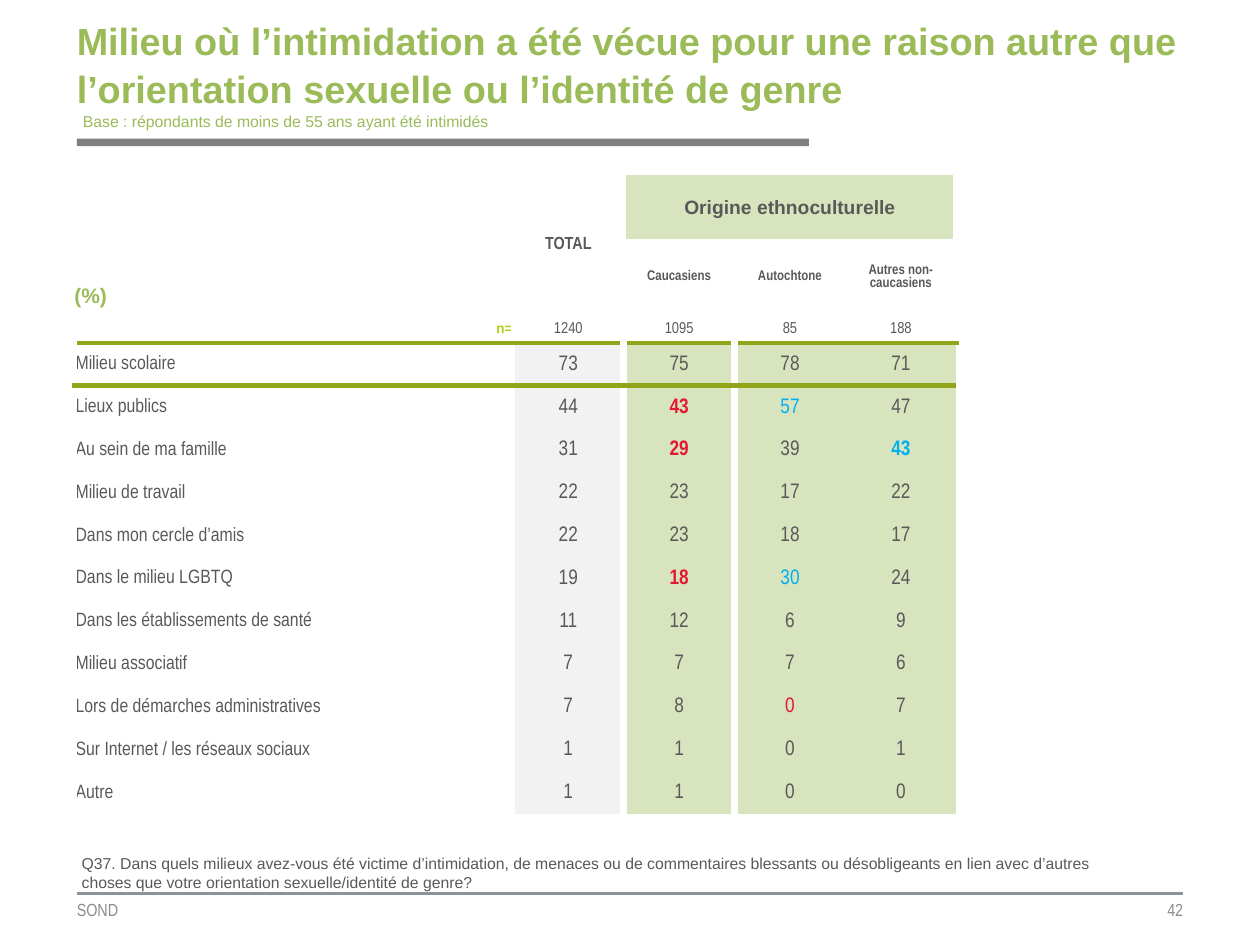
"""Build the slide on where bullying was experienced, by ethnocultural origin."""
from lxml import etree
from pptx import Presentation
from pptx.dml.color import RGBColor
from pptx.enum.shapes import MSO_CONNECTOR, MSO_SHAPE
from pptx.enum.text import MSO_ANCHOR, PP_ALIGN
from pptx.oxml.ns import qn
from pptx.util import Inches, Pt

LEFT, CENTER, RIGHT = PP_ALIGN.LEFT, PP_ALIGN.CENTER, PP_ALIGN.RIGHT
TOP, MIDDLE, BOTTOM = MSO_ANCHOR.TOP, MSO_ANCHOR.MIDDLE, MSO_ANCHOR.BOTTOM
STRAIGHT, RECTANGLE = MSO_CONNECTOR.STRAIGHT, MSO_SHAPE.RECTANGLE

GREEN = RGBColor(0x9B, 0xBB, 0x59)
LIME = RGBColor(0xB5, 0xCC, 0x22)
OLIVE = RGBColor(0x91, 0xA5, 0x1B)
PALE_GREEN = RGBColor(0xD7, 0xE4, 0xBD)
PALE_GRAY = RGBColor(0xF2, 0xF2, 0xF2)
TEXT_GRAY = RGBColor(0x59, 0x59, 0x59)
FOOTER_GRAY = RGBColor(0x8C, 0x8C, 0x8C)
BAR_GRAY = RGBColor(0x7F, 0x7F, 0x7F)
RULE_GRAY = RGBColor(0x88, 0x95, 0x9E)
WHITE = RGBColor(0xFF, 0xFF, 0xFF)
RED = RGBColor(0xE3, 0x18, 0x36)
BLUE = RGBColor(0x00, 0xB0, 0xF0)

SANS, NARROW = "Arial", "Arial Narrow"
NO_STYLE = "{2D5ABB26-0587-4C30-8999-92F81FD0307C}"
NO_INSETS = (0, 0, 0, 0)
CELL_INSETS = (0.01, 0.01, 0.01, 0)
SIDE_INSETS = (0, 0.05, 0, 0.05)

COLUMN_WIDTHS = [3.48] + [0.88] * 4
HEADER_HEIGHTS = [0.27, 0.18, 0.6, 0.2]
ROW_HEIGHT = 0.34
GROUPS = ["Caucasiens", "Autochtone", "Autres non-caucasiens"]
SAMPLE_SIZES = [1240, 1095, 85, 188]
RESULTS = [
    ("Milieu scolaire", 73, 75, 78, 71),
    ("Lieux publics", 44, 43, 57, 47),
    ("Au sein de ma famille", 31, 29, 39, 43),
    ("Milieu de travail", 22, 23, 17, 22),
    ("Dans mon cercle d’amis", 22, 23, 18, 17),
    ("Dans le milieu LGBTQ", 19, 18, 30, 24),
    ("Dans les établissements de santé", 11, 12, 6, 9),
    ("Milieu associatif", 7, 7, 7, 6),
    ("Lors de démarches administratives", 7, 8, 0, 7),
    ("Sur Internet / les réseaux sociaux", 1, 1, 0, 1),
    ("Autre", 1, 1, 0, 0),
]
HIGHLIGHTS = {
    ("Lieux publics", 2): (RED, True),
    ("Lieux publics", 3): (BLUE, False),
    ("Au sein de ma famille", 2): (RED, True),
    ("Au sein de ma famille", 4): (BLUE, True),
    ("Dans le milieu LGBTQ", 2): (RED, True),
    ("Dans le milieu LGBTQ", 3): (BLUE, False),
    ("Lors de démarches administratives", 3): (RED, False),
}


def write_text(frame, text, size=9, font=SANS, color=TEXT_GRAY, bold=False,
               align=LEFT, spacing=None):
    """Write one formatted paragraph into a text frame."""
    paragraph = frame.paragraphs[0]
    paragraph.alignment = align
    if spacing:
        paragraph.line_spacing = spacing
    run = paragraph.add_run()
    run.text = text
    run.font.size = Pt(size)
    run.font.name = font
    run.font.bold = bold
    run.font.color.rgb = color


class SlideBuilder:
    """Hold the current slide and draw its elements."""

    def __init__(self, slide):
        """Keep the slide to draw on."""
        self.slide = slide

    def text(self, left, top, width, height, text, anchor=TOP,
             insets=(0.1, 0.05, 0.1, 0.05), **style):
        """Add a wrapping text box."""
        box = self.slide.shapes.add_textbox(
            Inches(left), Inches(top), Inches(width), Inches(height))
        frame = box.text_frame
        frame.word_wrap = True
        frame.vertical_anchor = anchor
        (frame.margin_left, frame.margin_top,
         frame.margin_right, frame.margin_bottom) = map(Inches, insets)
        write_text(frame, text, **style)

    def bar(self, left, top, width, height, color):
        """Add a filled rectangle without outline."""
        shape = self.slide.shapes.add_shape(
            RECTANGLE, Inches(left), Inches(top), Inches(width), Inches(height))
        shape.shadow.inherit = False
        shape.fill.solid()
        shape.fill.fore_color.rgb = color
        shape.line.fill.background()

    def rule(self, left, right, y, color, weight):
        """Add a horizontal line."""
        line = self.slide.shapes.add_connector(
            STRAIGHT, Inches(left), Inches(y), Inches(right), Inches(y))
        line.line.color.rgb = color
        line.line.width = Pt(weight)
        etree.SubElement(line._element.spPr, qn("a:effectLst"))

    def table(self, left, top, widths, heights):
        """Add an unstyled table with the given grid."""
        frame = self.slide.shapes.add_table(
            len(heights), len(widths), Inches(left), Inches(top),
            Inches(sum(widths)), Inches(sum(heights)))
        table = frame.table
        table.first_row = table.horz_banding = False
        table._tbl.tblPr.find(qn("a:tableStyleId")).text = NO_STYLE
        for column, width in zip(table.columns, widths):
            column.width = Inches(width)
        for row, height in zip(table.rows, heights):
            row.height = Inches(height)
        return table

    def border(self, cell, side, color, weight):
        """Draw one side of a cell: L, R, T or B, in that order."""
        properties = cell._tc.get_or_add_tcPr()
        line = etree.SubElement(properties, qn(f"a:ln{side}"), w=str(Pt(weight)))
        fill = etree.SubElement(line, qn("a:solidFill"))
        etree.SubElement(fill, qn("a:srgbClr"), val=str(color))

    def cell(self, cell, text="", fill=None, borders=(), anchor=MIDDLE,
             insets=CELL_INSETS, **style):
        """Fill, outline and write one table cell."""
        for side, color, weight in borders:
            self.border(cell, side, color, weight)
        if fill is None:
            cell.fill.background()
        else:
            cell.fill.solid()
            cell.fill.fore_color.rgb = fill
        cell.vertical_anchor = anchor
        (cell.margin_left, cell.margin_top,
         cell.margin_right, cell.margin_bottom) = map(Inches, insets)
        write_text(cell.text_frame, text, **style)


def header_content():
    """Return the text and format of each header cell by row and column."""
    group = dict(size=8, font=NARROW, bold=True, align=CENTER)
    sample = dict(size=9, font=NARROW, align=CENTER)
    content = {
        (0, 1): dict(text="TOTAL", size=10, font=NARROW, bold=True, align=CENTER),
        (0, 2): dict(text="Origine ethnoculturelle", size=11, bold=True,
                     align=CENTER, fill=PALE_GREEN),
        (1, 0): dict(text="(%)", size=12, color=GREEN, bold=True, anchor=BOTTOM,
                     insets=SIDE_INSETS, spacing=0.95),
        (3, 0): dict(text="n=", size=8, color=LIME, bold=True, align=RIGHT,
                     insets=SIDE_INSETS, spacing=0.95),
    }
    for column, name in enumerate(GROUPS, 2):
        content[2, column] = dict(text=name, **group)
    for column, count in enumerate(SAMPLE_SIZES, 1):
        content[3, column] = dict(text=str(count), **sample)
    return content


def add_results(builder):
    """Add the table of results."""
    header_count = len(HEADER_HEIGHTS)
    table = builder.table(0.59, 1.39, COLUMN_WIDTHS,
                          HEADER_HEIGHTS + [ROW_HEIGHT] * len(RESULTS))
    for first, last in [((0, 1), (2, 1)), ((0, 2), (1, 4)), ((1, 0), (2, 0))]:
        table.cell(*first).merge(table.cell(*last))

    content = header_content()
    for row in range(header_count):
        for column in range(len(COLUMN_WIDTHS)):
            borders = [("L", WHITE, 3)] if column else []
            borders.append(("R", WHITE, 4.5 if (row, column) == (0, 2) else 3))
            if row == header_count - 1:
                borders.append(("B", OLIVE, 3))
            style = content.get((row, column), dict(size=6))
            builder.cell(table.cell(row, column), borders=borders, **style)

    fills = [None, PALE_GRAY] + [PALE_GREEN] * 3
    sides = [
        [("L", WHITE, 3), ("R", WHITE, 3)],
        [("L", WHITE, 3), ("R", WHITE, 4.5)],
        [("L", WHITE, 4.5)], [], [],
    ]
    for row, result in enumerate(RESULTS, header_count):
        top = [("T", OLIVE, 3)] if row == header_count else []
        for column, value in enumerate(result):
            color, bold = HIGHLIGHTS.get((result[0], column), (TEXT_GRAY, False))
            builder.cell(table.cell(row, column), str(value), fill=fills[column],
                         borders=sides[column] + top, size=12 if column else 11,
                         font=NARROW, color=color, bold=bold,
                         align=CENTER if column else LEFT)


def main():
    """Build and save the presentation."""
    presentation = Presentation()
    presentation.slide_width, presentation.slide_height = Inches(10), Inches(7.5)
    builder = SlideBuilder(presentation.slides.add_slide(presentation.slide_layouts[6]))
    builder.rule(0.61, 9.39, 7.09, RULE_GRAY, 1.5)
    builder.bar(0.61, 1.1, 5.81, 0.06, BAR_GRAY)
    footer = dict(anchor=MIDDLE, insets=NO_INSETS, size=10, font=NARROW, color=FOOTER_GRAY)
    builder.text(0.61, 7.09, 2.8, 0.26, "SOND", **footer)
    builder.text(6.55, 7.09, 2.84, 0.26, "42", align=RIGHT, **footer)
    add_results(builder)
    builder.text(0.61, 0.12, 8.96, 0.95,
                 "Milieu où l’intimidation a été vécue pour une raison autre que "
                 "l’orientation sexuelle ou l’identité de genre",
                 insets=NO_INSETS, size=21.6, color=GREEN, bold=True, spacing=1.06)
    builder.text(0.56, 0.84, 3.42, 0.25,
                 "Base : répondants de moins de 55 ans ayant été intimidés", color=GREEN)
    builder.text(0.55, 6.73, 8.55, 0.4,
                 "Q37. Dans quels milieux avez-vous été victime d’intimidation, de menaces "
                 "ou de commentaires blessants ou désobligeants en lien avec d’autres choses "
                 "que votre orientation sexuelle/identité de genre?")
    presentation.save("out.pptx")


if __name__ == "__main__":
    main()
